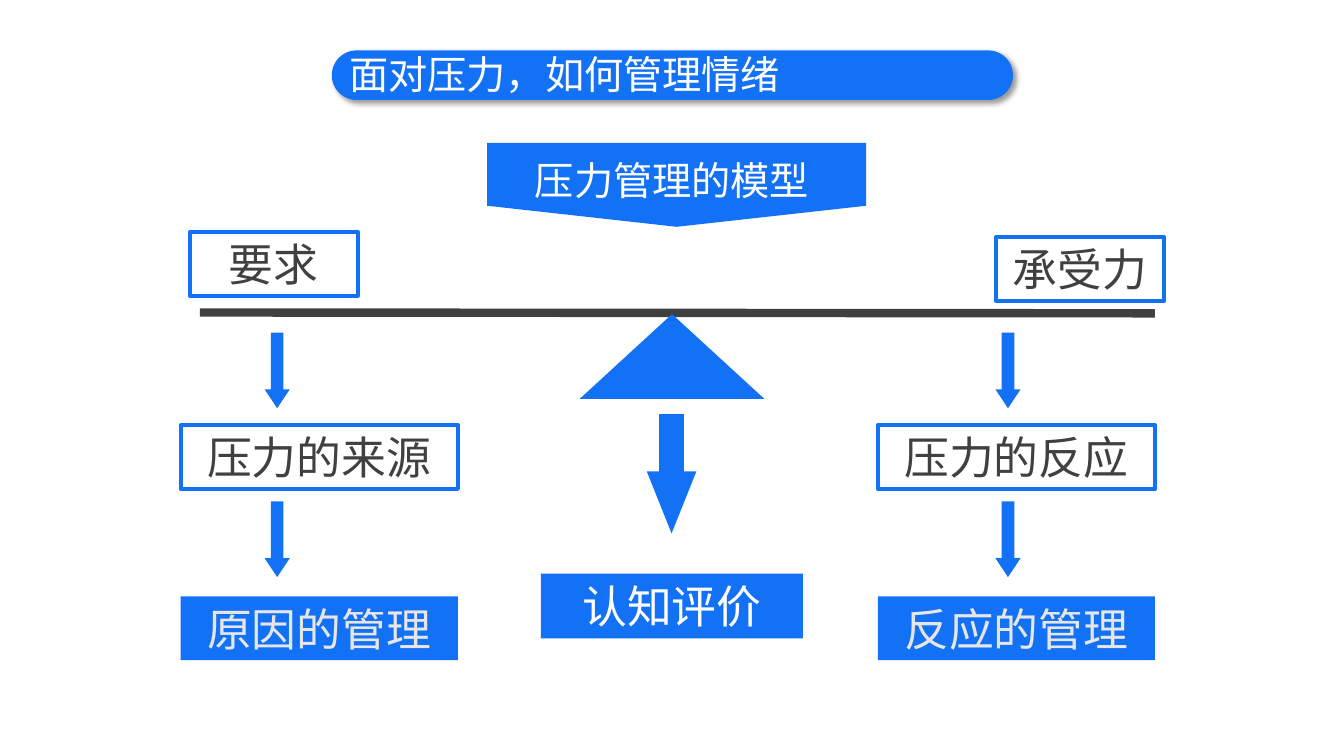
from dataclasses import dataclass

from lxml import etree
from pptx import Presentation
from pptx.dml.color import RGBColor
from pptx.enum.shapes import MSO_CONNECTOR, MSO_SHAPE
from pptx.enum.text import MSO_ANCHOR, PP_ALIGN
from pptx.oxml.ns import qn
from pptx.util import Inches, Pt

RECTANGLE = MSO_SHAPE.RECTANGLE
PILL = MSO_SHAPE.ROUNDED_RECTANGLE
PENTAGON = MSO_SHAPE.PENTAGON
DOWN_ARROW = MSO_SHAPE.DOWN_ARROW
TRIANGLE = MSO_SHAPE.ISOSCELES_TRIANGLE
STRAIGHT = MSO_CONNECTOR.STRAIGHT
MIDDLE = MSO_ANCHOR.MIDDLE
LEFT = PP_ALIGN.LEFT
CENTER = PP_ALIGN.CENTER

COLUMNS, ROWS = 160, 90
WIDTH, HEIGHT = Inches(13.333), Inches(7.5)
TITLE_ONLY = 5


@dataclass(frozen=True)
class Theme:
    font: str = "Noto Sans CJK SC"
    blue: RGBColor = RGBColor(0x13, 0x71, 0xF6)
    dark: RGBColor = RGBColor(0x40, 0x40, 0x40)
    pale: RGBColor = RGBColor(0xE7, 0xE6, 0xE6)
    white: RGBColor = RGBColor(0xFF, 0xFF, 0xFF)
    heading: Pt = Pt(28)
    label: Pt = Pt(32)
    outline: Pt = Pt(3)
    beam: Pt = Pt(6)


THEME = Theme()


def across(columns):
    return round(WIDTH * columns / COLUMNS)


def down(rows):
    return round(HEIGHT * rows / ROWS)


def cells(column, row, columns, rows):
    return across(column), down(row), across(columns), down(rows)


def write(shape, text, size, color, alignment=CENTER):
    frame = shape.text_frame
    frame.word_wrap = True
    frame.vertical_anchor = MIDDLE
    frame.margin_top = frame.margin_bottom = 0
    paragraph = frame.paragraphs[0]
    paragraph.alignment = alignment
    run = paragraph.add_run()
    run.text = text
    run.font.size = size
    run.font.color.rgb = color
    run.font.name = THEME.font
    east_asian = etree.SubElement(run.font._element, qn("a:ea"))
    east_asian.set("typeface", THEME.font)


def add_solid(slide, kind, area, adjustments=()):
    shape = slide.shapes.add_shape(kind, *cells(*area))
    shape.shadow.inherit = False
    shape.fill.solid()
    shape.fill.fore_color.rgb = THEME.blue
    shape.line.fill.background()
    for index, value in enumerate(adjustments):
        shape.adjustments[index] = value
    return shape


def add_solid_label(slide, text, area, color):
    write(add_solid(slide, RECTANGLE, area), text, THEME.label, color)


def add_outlined_label(slide, text, area):
    shape = add_solid(slide, RECTANGLE, area)
    shape.fill.background()
    shape.line.color.rgb = THEME.blue
    shape.line.width = THEME.outline
    write(shape, text, THEME.label, THEME.dark)


def add_drop_shadow(shape):
    effects = shape._element.spPr.find(qn("a:effectLst"))
    shadow = etree.SubElement(
        effects, qn("a:outerShdw"),
        blurRad=str(Pt(4)), dist=str(Pt(3)), dir="2700000", algn="tl", rotWithShape="0")
    color = etree.SubElement(shadow, qn("a:srgbClr"), val="000000")
    etree.SubElement(color, qn("a:alpha"), val="40000")


def add_title(slide, text):
    add_drop_shadow(add_solid(slide, PILL, (39.5, 6, 81.1, 5.9), [0.5]))
    title = slide.shapes.title
    title.left, title.top, title.width, title.height = cells(40.4, 5.4, 79.2, 6.8)
    write(title, text, THEME.heading, THEME.white, LEFT)
    slide.shapes._spTree.append(title._element)


def add_banner(slide, text):
    column, row, columns, rows = 58, 17, 45.1, 10
    turned = (column + (columns - rows) / 2, row - (columns - rows) / 2, rows, columns)
    add_solid(slide, PENTAGON, turned, [0.25]).rotation = 90
    box = slide.shapes.add_textbox(*cells(56.8, 16.4, 46.4, 10))
    write(box, text, THEME.heading, THEME.white)


def add_beam(slide):
    beam = slide.shapes.add_connector(
        STRAIGHT, across(23.8), down(37.2), across(137.5), down(37.3))
    beam.line.color.rgb = THEME.dark
    beam.line.width = THEME.beam
    etree.SubElement(beam._element.spPr, qn("a:effectLst"))


def add_branch(slide, column, arrow_column, factor, management):
    add_outlined_label(slide, factor, (column, 50.6, 33, 7.6))
    add_solid_label(slide, management, (column, 71, 33, 7.6), THEME.pale)
    for row in (39.6, 59.7):
        add_solid(slide, DOWN_ARROW, (arrow_column, row, 3, 9), [0.5, 0.75])


def main():
    presentation = Presentation()
    presentation.slide_width, presentation.slide_height = WIDTH, HEIGHT
    slide = presentation.slides.add_slide(presentation.slide_layouts[TITLE_ONLY])
    add_title(slide, "面对压力，如何管理情绪")
    add_banner(slide, "压力管理的模型")
    add_beam(slide)
    add_outlined_label(slide, "要求", (22.6, 27.6, 20, 7.6))
    add_outlined_label(slide, "承受力", (118.6, 28.2, 20, 7.6))
    add_branch(slide, 21.5, 31.5, "压力的来源", "原因的管理")
    add_branch(slide, 104.5, 118.5, "压力的反应", "反应的管理")
    add_solid_label(slide, "认知评价", (64.4, 68.3, 31.2, 7.7), THEME.white)
    add_solid(slide, DOWN_ARROW, (77, 49.3, 5.9, 14.2), [0.5, 1.25])
    add_solid(slide, TRIANGLE, (69, 37.4, 22, 10.1))
    presentation.save("out.pptx")


if __name__ == "__main__":
    main()
